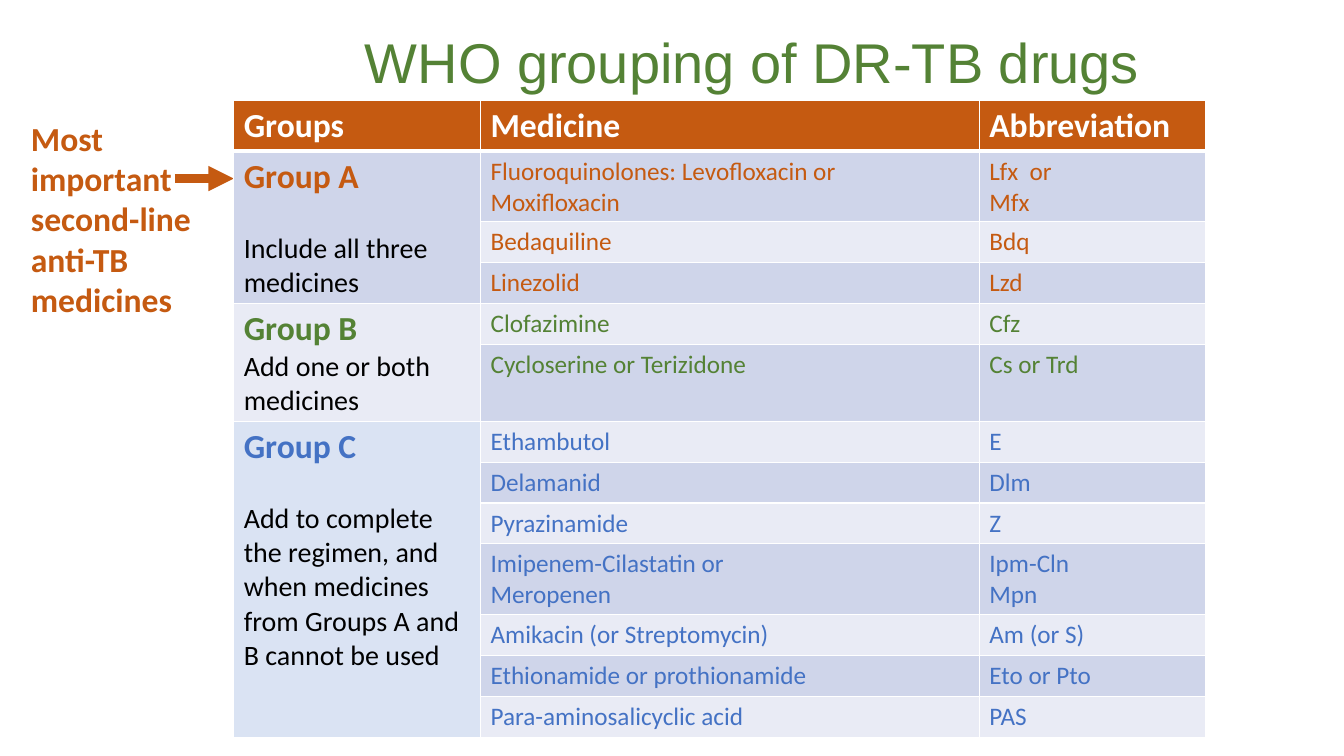
from dataclasses import dataclass

from lxml import etree
from pptx import Presentation
from pptx.dml.color import RGBColor
from pptx.enum import shapes, text
from pptx.oxml import ns
from pptx.util import Cm, Pt


@dataclass(frozen=True)
class Theme:
    orange: str = "C55A11"
    green: str = "548235"
    blue: str = "4472C4"
    black: str = "000000"
    white: str = "FFFFFF"
    bands: tuple = ("CFD5EA", "E9EBF5")
    pale_blue: str = "DAE3F3"
    title_font: str = "Arial"
    body_font: str = "Calibri"
    title: int = 40
    heading: int = 24
    advice: int = 20
    medicine: int = 18


THEME = Theme()
COLUMNS = [("Groups", 6.22), ("Medicine", 12.57), ("Abbreviation", 5.69)]
ROW_HEIGHT = 1.03

# Name, advice, gap before the advice (pt), colour, fill, medicines
GROUPS = [
    ("Group A", "Include all three medicines", 24.4, THEME.orange, THEME.bands[0], [
        ("Fluoroquinolones: Levofloxacin or Moxifloxacin", "Lfx  or\nMfx"),
        ("Bedaquiline", "Bdq"),
        ("Linezolid", "Lzd"),
    ]),
    ("Group B", "Add one or both medicines", 0, THEME.green, THEME.bands[1], [
        ("Clofazimine", "Cfz"),
        ("Cycloserine or Terizidone", "Cs or Trd"),
    ]),
    ("Group C",
     "Add to complete the regimen, and when medicines from Groups A and B cannot be used",
     24.4, THEME.blue, THEME.pale_blue, [
         ("Ethambutol", "E"),
         ("Delamanid", "Dlm"),
         ("Pyrazinamide", "Z"),
         ("Imipenem-Cilastatin or\nMeropenen", "Ipm-Cln\nMpn"),
         ("Amikacin (or Streptomycin)", "Am (or S)"),
         ("Ethionamide or prothionamide", "Eto or Pto"),
         ("Para-aminosalicyclic acid", "PAS"),
     ]),
]


def set_font(paragraph, size, color, bold=False, name=THEME.body_font):
    font = paragraph.font
    font.name, font.size, font.bold = name, Pt(size), bold
    font.color.rgb = RGBColor.from_string(color)


def add_title(slide, left, top, width, height):
    title = slide.shapes.title
    title.left, title.top, title.width, title.height = map(Cm, (left, top, width, height))
    title.text_frame.text = "WHO grouping of DR-TB drugs"
    title.text_frame.vertical_anchor = text.MSO_ANCHOR.MIDDLE
    heading = title.text_frame.paragraphs[0]
    heading.alignment = text.PP_ALIGN.CENTER
    heading.line_spacing = 0.9
    set_font(heading, THEME.title, THEME.green, name=THEME.title_font)


def add_callout(slide, left, top, width, height, target):
    """Place the remark and an arrow that ends at the x position target."""
    remark = slide.shapes.add_textbox(*map(Cm, (left, top, width, height))).text_frame
    remark.word_wrap = True
    remark.text = "Most important second-line anti-TB medicines"
    set_font(remark.paragraphs[0], THEME.heading, THEME.orange, bold=True)

    arrow_y = Cm(top + 1.66)
    arrow = slide.shapes.add_connector(
        shapes.MSO_CONNECTOR.STRAIGHT, Cm(target - 1.48), arrow_y, Cm(target), arrow_y)
    arrow.line.color.rgb = RGBColor.from_string(THEME.orange)
    arrow.line.width = Pt(6)
    etree.SubElement(arrow.line._get_or_add_ln(), ns.qn("a:tailEnd"), type="triangle")
    etree.SubElement(arrow._element.spPr, ns.qn("a:effectLst"))


def style_cell(cell, fill, top_border=1, bottom_border=1):
    properties = cell._tc.get_or_add_tcPr()
    for side, points in zip("LRTB", (1, 1, top_border, bottom_border)):
        border = etree.SubElement(properties, ns.qn(f"a:ln{side}"), w=str(Pt(points)))
        paint = etree.SubElement(border, ns.qn("a:solidFill"))
        etree.SubElement(paint, ns.qn("a:srgbClr"), val=THEME.white)
    cell.fill.solid()
    cell.fill.fore_color.rgb = RGBColor.from_string(fill)


def fill_cell(cell, content, size, color, bold=False):
    cell.text_frame.text = content
    for paragraph in cell.text_frame.paragraphs:
        set_font(paragraph, size, color, bold)


def fill_group(table, first_row, group):
    """Fill the rows of one group and return the row after it."""
    name, advice, gap, color, group_fill, medicines = group
    for row, medicine in enumerate(medicines, first_row):
        top_border = 3 if row == 1 else 1
        style_cell(table.cell(row, 0), group_fill, top_border)
        for column, content in enumerate(medicine, 1):
            cell = table.cell(row, column)
            style_cell(cell, THEME.bands[(row - 1) % 2], top_border)
            fill_cell(cell, content, THEME.medicine, color)

    label = table.cell(first_row, 0)
    label.merge(table.cell(row, 0))
    fill_cell(label, name, THEME.heading, color, bold=True)
    instruction = label.text_frame.add_paragraph()
    instruction.text = advice
    instruction.space_before = Pt(gap)
    set_font(instruction, THEME.advice, THEME.black)
    return row + 1


def add_drug_table(slide, left, top):
    row_count = 1 + sum(len(group[-1]) for group in GROUPS)
    width = sum(column_width for _, column_width in COLUMNS)
    table = slide.shapes.add_table(
        row_count, len(COLUMNS), Cm(left), Cm(top), Cm(width), Cm(ROW_HEIGHT * row_count)).table
    for row in table.rows:
        row.height = Cm(ROW_HEIGHT)
    for index, (heading, column_width) in enumerate(COLUMNS):
        table.columns[index].width = Cm(column_width)
        cell = table.cell(0, index)
        style_cell(cell, THEME.orange, bottom_border=3)
        fill_cell(cell, heading, THEME.heading, THEME.white, bold=True)

    next_row = 1
    for group in GROUPS:
        next_row = fill_group(table, next_row, group)


def main():
    deck = Presentation()
    deck.slide_width, deck.slide_height = Cm(33.87), Cm(19.05)
    slide = deck.slides.add_slide(deck.slide_layouts.get_by_name("Title Only"))
    table_left = 5.89
    add_title(slide, 3.76, 0, 30.38, 3.28)
    add_callout(slide, 0.53, 2.84, 5.97, 5.38, target=table_left)
    add_drug_table(slide, table_left, 2.54)
    deck.save("out.pptx")


if __name__ == "__main__":
    main()
